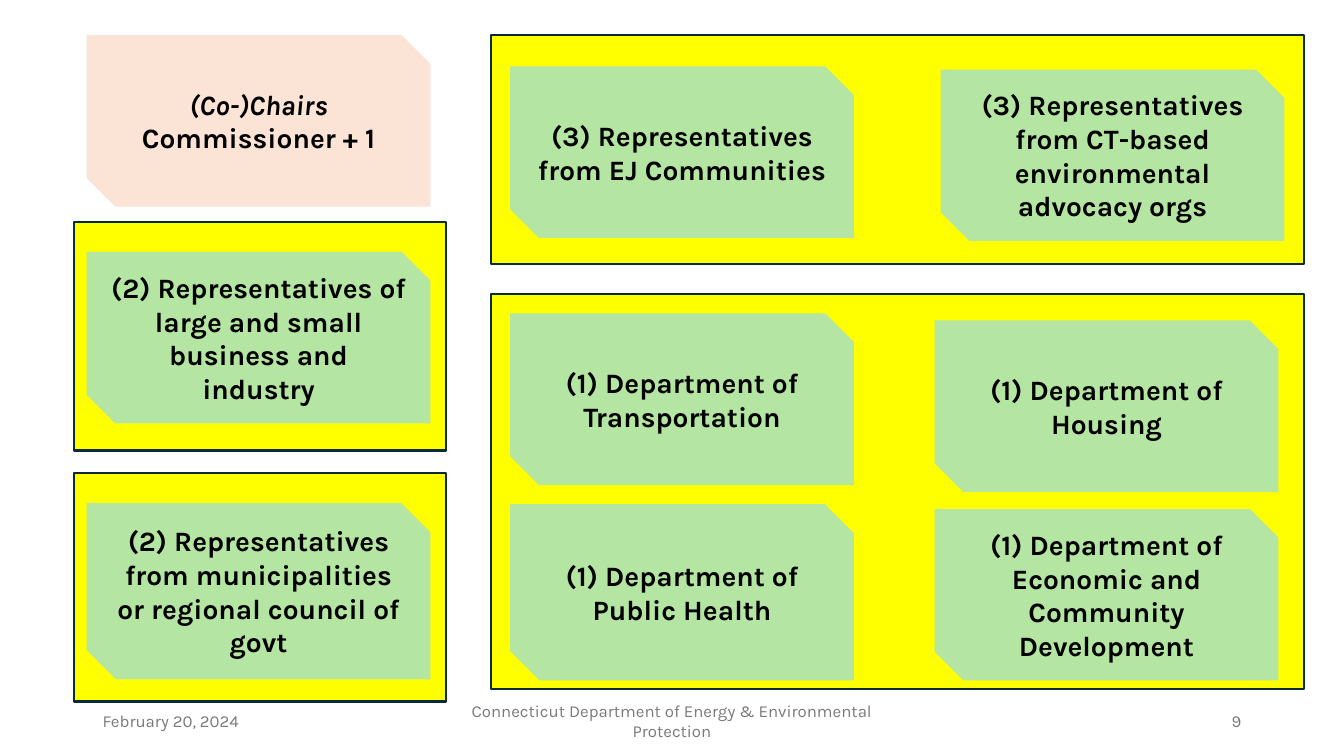
"""Build the slide showing the make-up of the council, grouped by kind of member."""
import pptx
import pptx.util
import pptx.dml.color
import pptx.enum.shapes
import pptx.enum.text

Inches, Pt = pptx.util.Inches, pptx.util.Pt
SHAPE = pptx.enum.shapes.MSO_SHAPE
ALIGN = pptx.enum.text.PP_ALIGN
MIDDLE = pptx.enum.text.MSO_ANCHOR.MIDDLE

THEME = {
    "font": "Karla", "card_size": 20, "footer_size": 12, "outline": 1.5,
    "group": "FFFF00", "border": "092A39", "member": "B4E5A2",
    "chair": "FBE3D6", "text": "000000", "footer": "797979",
}
WIDTH, HEIGHT = 13.33, 7.5
LEFT, CENTER, RIGHT = 0.86, 5.06, 9.27
CARD_WIDTH, CARD_HEIGHT, TALL_CARD = 3.41, 1.7, 1.75
GROUP_LEFT, GROUP_RIGHT = 0.73, 4.87
GROUP_NARROW, GROUP_WIDE, GROUP_HEIGHT = 3.69, 8.06, 2.27
TOP = 0.35
FOOTER_TOP, FOOTER_HEIGHT, FOOTER_MARGIN = 6.95, 0.4, 0.92
SIDE_FOOTER, MIDDLE_FOOTER = 3, 4.5


def add_block(preset, left, top, width, height, fill):
    """Add a filled shape without outline or shadow."""
    block = page.shapes.add_shape(
        preset, Inches(left), Inches(top), Inches(width), Inches(height))
    block.shadow.inherit = False
    block.fill.solid()
    block.fill.fore_color.rgb = pptx.dml.color.RGBColor.from_string(THEME[fill])
    block.line.fill.background()
    return block


def write(box, lines, align, size, color, bold=False):
    """Write one paragraph per line, vertically centred in the box."""
    frame = box.text_frame
    frame.word_wrap = True
    frame.vertical_anchor = MIDDLE
    for index, line in enumerate(lines):
        para = frame.paragraphs[0] if index == 0 else frame.add_paragraph()
        para.text = line
        para.alignment = align
        para.font.name = THEME["font"]
        para.font.size = Pt(THEME[size])
        para.font.bold = bold
        para.font.color.rgb = pptx.dml.color.RGBColor.from_string(THEME[color])


deck = pptx.Presentation()
deck.slide_width, deck.slide_height = Inches(WIDTH), Inches(HEIGHT)
page = deck.slides.add_slide(deck.slide_layouts[6])

groups = [
    (GROUP_LEFT, 4.69, GROUP_NARROW, GROUP_HEIGHT),
    (GROUP_LEFT, 2.2, GROUP_NARROW, GROUP_HEIGHT),
    (GROUP_RIGHT, 2.92, GROUP_WIDE, 3.92),
    (GROUP_RIGHT, TOP, GROUP_WIDE, GROUP_HEIGHT),
]
for left, top, width, height in groups:
    group = add_block(SHAPE.RECTANGLE, left, top, width, height, "group")
    group.line.color.rgb = pptx.dml.color.RGBColor.from_string(THEME["border"])
    group.line.width = Pt(THEME["outline"])

members = [
    (LEFT, 2.5, CARD_HEIGHT, "(2) Representatives of large and small business and industry"),
    (LEFT, 4.99, TALL_CARD, "(2) Representatives from municipalities or regional council of govt"),
    (CENTER, 0.66, CARD_HEIGHT, "(3) Representatives from EJ Communities"),
    (CENTER, 3.11, CARD_HEIGHT, "(1) Department of Transportation"),
    (CENTER, 5, TALL_CARD, "(1) Department of Public Health"),
    (RIGHT + 0.06, 0.69, CARD_HEIGHT,
     "(3) Representatives from CT-based environmental advocacy orgs"),
    (RIGHT, 3.18, CARD_HEIGHT, "(1) Department of Housing"),
    (RIGHT, 5.05, CARD_HEIGHT, "(1) Department of Economic and Community Development"),
]
for left, top, height, label in members:
    card = add_block(SHAPE.SNIP_2_DIAG_RECTANGLE, left, top, CARD_WIDTH, height, "member")
    write(card, [label], ALIGN.CENTER, "card_size", "text", bold=True)

chairs = add_block(SHAPE.SNIP_2_DIAG_RECTANGLE, LEFT, TOP, CARD_WIDTH, CARD_HEIGHT, "chair")
write(chairs, ["(Co-)Chairs", "Commissioner + 1"], ALIGN.CENTER, "card_size", "text", bold=True)
chairs.text_frame.paragraphs[0].font.italic = True

footers = [
    (FOOTER_MARGIN, SIDE_FOOTER, ALIGN.LEFT, "February 20, 2024"),
    ((WIDTH - MIDDLE_FOOTER) / 2, MIDDLE_FOOTER, ALIGN.CENTER,
     "Connecticut Department of Energy & Environmental Protection"),
    (WIDTH - FOOTER_MARGIN - SIDE_FOOTER, SIDE_FOOTER, ALIGN.RIGHT, "9"),
]
for left, width, align, label in footers:
    box = page.shapes.add_textbox(
        Inches(left), Inches(FOOTER_TOP), Inches(width), Inches(FOOTER_HEIGHT))
    write(box, [label], align, "footer_size", "footer")

deck.save("out.pptx")
